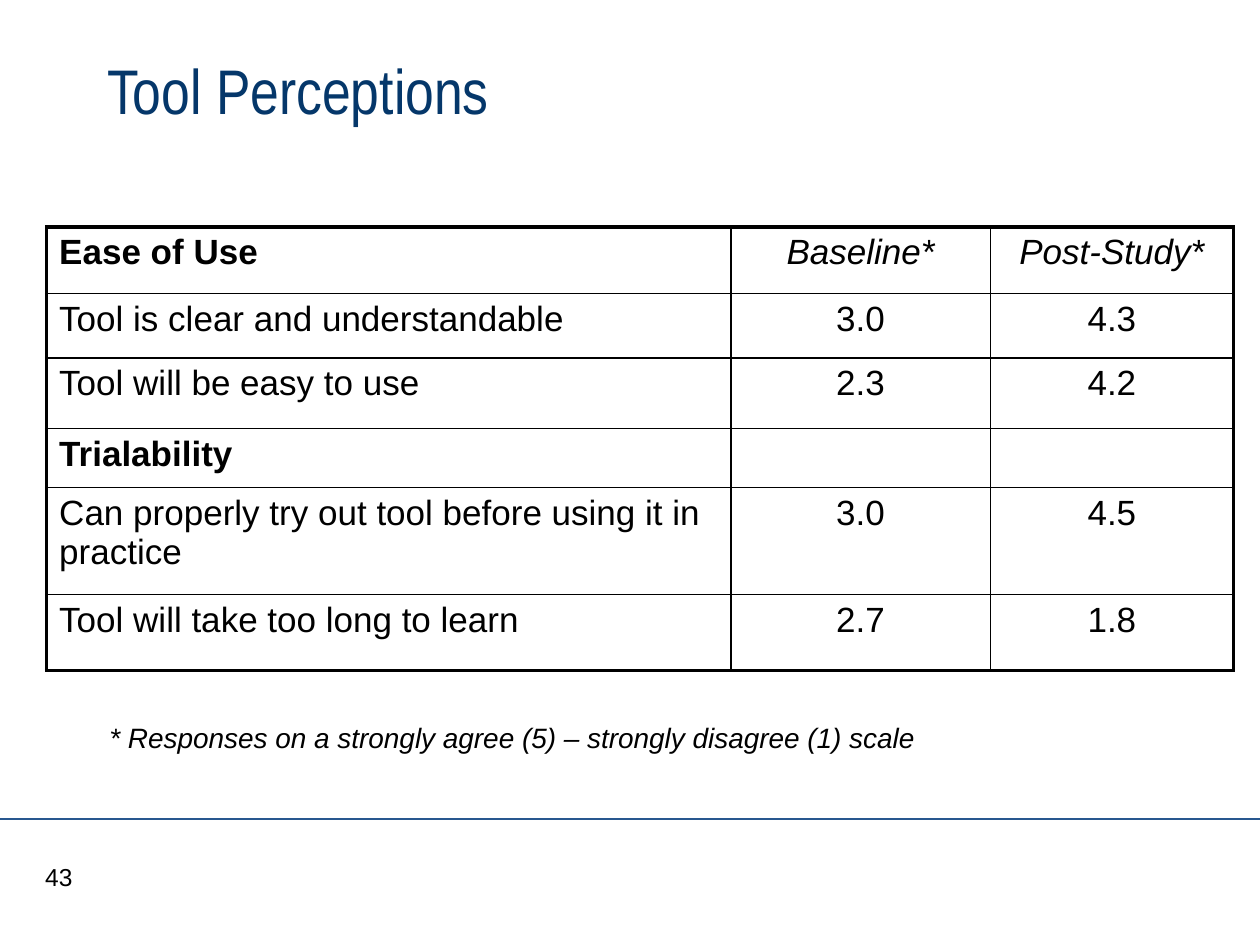
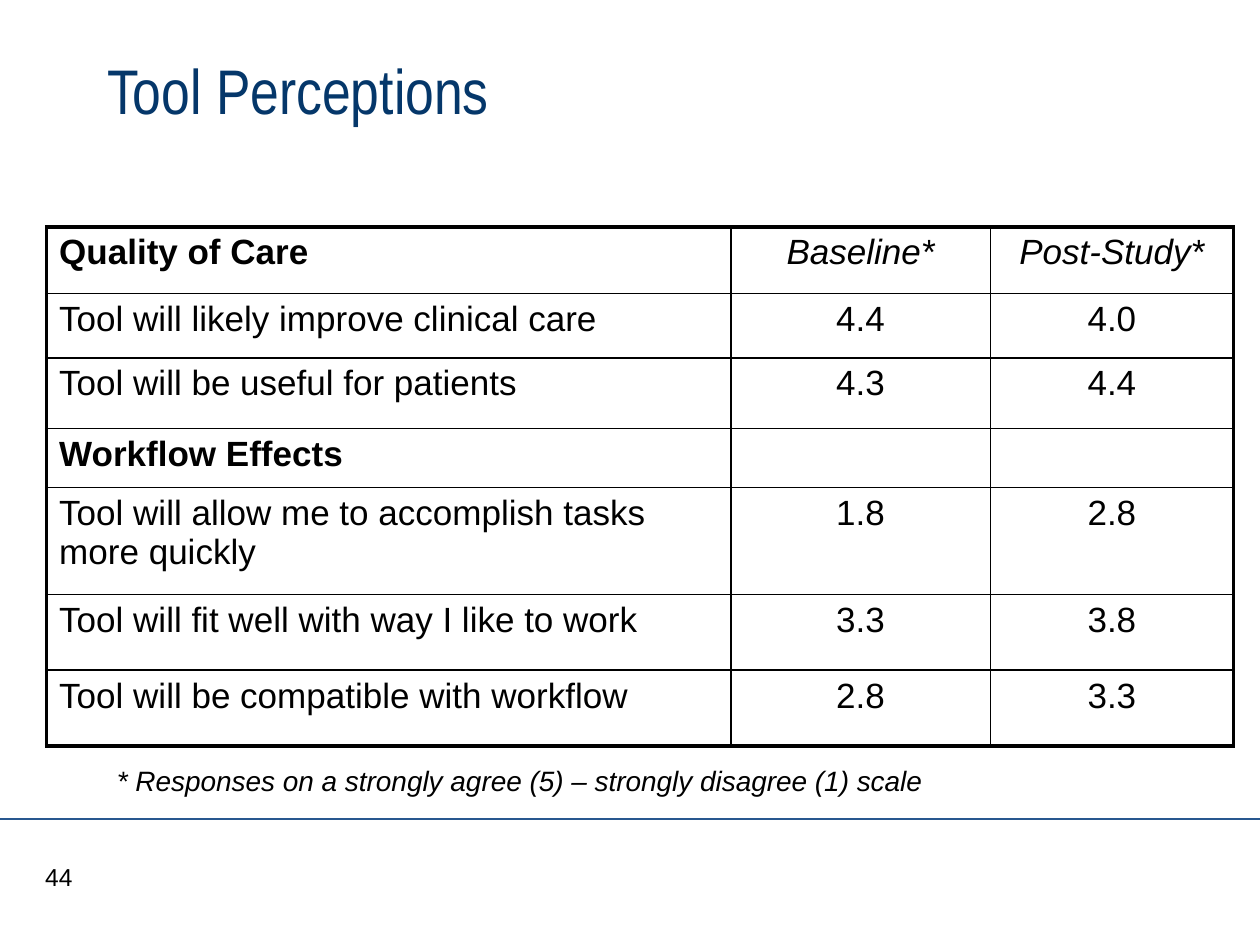
from dataclasses import dataclass

from lxml import etree
from pptx import Presentation
from pptx.dml.color import RGBColor
from pptx.enum.shapes import MSO_CONNECTOR
from pptx.enum.text import MSO_ANCHOR, MSO_AUTO_SIZE, PP_ALIGN
from pptx.oxml.ns import qn
from pptx.util import Inches, Pt

LEFT, CENTER = PP_ALIGN.LEFT, PP_ALIGN.CENTER
MIDDLE, TOP = MSO_ANCHOR.MIDDLE, MSO_ANCHOR.TOP
NO_AUTOFIT = MSO_AUTO_SIZE.NONE
STRAIGHT = MSO_CONNECTOR.STRAIGHT


@dataclass(frozen=True)
class Theme:
    title_color: RGBColor = RGBColor.from_string("05376A")
    rule_color: RGBColor = RGBColor.from_string("28578F")
    ink: RGBColor = RGBColor.from_string("000000")
    title_font: str = "Arial Narrow"
    body_font: str = "Arial"
    title_size: int = 36
    table_size: int = 20
    note_size: int = 16
    number_size: int = 14
    rule_width: float = 1.5
    outer_border: float = 2.25
    inner_border: float = 1


THEME = Theme()
SLIDE_WIDTH, SLIDE_HEIGHT = Inches(10), Inches(7.5)
RULE_TOP = Inches(6.5)
TABLE_LEFT, TABLE_TOP = Inches(0.37), Inches(1.8)
COLUMN_WIDTHS = [5.43, 2.06, 1.93]
ROW_HEIGHTS = [0.53, 0.51, 0.56, 0.47, 0.85, 0.6, 0.6]
TITLE = "Tool Perceptions"
NOTE = "* Responses on a strongly agree (5) – strongly disagree (1) scale"
FIRST_NUMBER = 43

# Each slide: place of the note (left, top) and the table rows
SLIDES = [
    ((0.77, 5.67), [
        ("Ease of Use", "Baseline*", "Post-Study*"),
        ("Tool is clear and understandable", "3.0", "4.3"),
        ("Tool will be easy to use", "2.3", "4.2"),
        ("Trialability", "", ""),
        ("Can properly try out tool before using it in practice", "3.0", "4.5"),
        ("Tool will take too long to learn", "2.7", "1.8"),
    ]),
    ((0.83, 6.01), [
        ("Quality of Care", "Baseline*", "Post-Study*"),
        ("Tool will likely improve clinical care", "4.4", "4.0"),
        ("Tool will be useful for patients", "4.3", "4.4"),
        ("Workflow Effects", "", ""),
        ("Tool will allow me to accomplish tasks more quickly", "1.8", "2.8"),
        ("Tool will fit well with way I like to work", "3.3", "3.8"),
        ("Tool will be compatible with workflow", "2.8", "3.3"),
    ]),
]
SECTION_ROWS = (0, 3)


def write(frame, text, size, font=THEME.body_font, color=THEME.ink,
          align=LEFT, bold=False, italic=False):
    """Put one styled run into the first paragraph and return the paragraph."""
    frame.word_wrap = True
    paragraph = frame.paragraphs[0]
    paragraph.alignment = align
    run = paragraph.add_run()
    run.text = text
    run.font.name, run.font.size = font, Pt(size)
    run.font.color.rgb = color
    run.font.bold, run.font.italic = bold, italic
    return paragraph


def set_borders(cell, widths):
    """Draw the cell's borders; widths maps L, R, T, B (in that order) to points."""
    properties = cell._tc.get_or_add_tcPr()
    for side, width in widths.items():
        line = etree.SubElement(properties, qn(f"a:ln{side}"), w=str(Pt(width)))
        fill = etree.SubElement(line, qn("a:solidFill"))
        etree.SubElement(fill, qn("a:srgbClr"), val=str(THEME.ink))


presentation = Presentation()
presentation.slide_width, presentation.slide_height = SLIDE_WIDTH, SLIDE_HEIGHT
title_only = presentation.slide_layouts[5]

for number, (note_place, rows) in enumerate(SLIDES, FIRST_NUMBER):
    slide = presentation.slides.add_slide(title_only)

    title = slide.shapes.title
    title.left, title.top = Inches(0.75), Inches(0.25)
    title.width, title.height = Inches(8.5), Inches(0.92)
    title.text_frame.auto_size = NO_AUTOFIT
    title.text_frame.vertical_anchor = MIDDLE
    write(title.text_frame, TITLE, THEME.title_size, THEME.title_font, THEME.title_color)

    rule = slide.shapes.add_connector(STRAIGHT, 0, RULE_TOP, SLIDE_WIDTH, RULE_TOP)
    rule.line.color.rgb = THEME.rule_color
    rule.line.width = Pt(THEME.rule_width)
    etree.SubElement(rule._element.spPr, qn("a:effectLst"))

    number_box = slide.shapes.add_textbox(
        Inches(0.26), Inches(6.79), Inches(0.45), Inches(0.33))
    write(number_box.text_frame, str(number), THEME.number_size)

    heights = ROW_HEIGHTS[:len(rows)]
    table = slide.shapes.add_table(
        len(rows), len(COLUMN_WIDTHS), TABLE_LEFT, TABLE_TOP,
        Inches(sum(COLUMN_WIDTHS)), Inches(sum(heights))).table
    table.first_row = table.horz_banding = False
    for column, width in zip(table.columns, COLUMN_WIDTHS):
        column.width = Inches(width)

    last_row, last_column = len(rows) - 1, len(COLUMN_WIDTHS) - 1
    for r, (values, height) in enumerate(zip(rows, heights)):
        table.rows[r].height = Inches(height)
        for c, value in enumerate(values):
            cell = table.cell(r, c)
            on_edge = {"L": c == 0, "R": c == last_column,
                       "T": r == 0, "B": r == last_row}
            set_borders(cell, {
                side: THEME.outer_border if edge else THEME.inner_border
                for side, edge in on_edge.items()})
            cell.fill.background()
            cell.vertical_anchor = TOP
            if value:
                write(cell.text_frame, value, THEME.table_size,
                      align=CENTER if c else LEFT,
                      bold=c == 0 and r in SECTION_ROWS,
                      italic=c > 0 and r == 0)

    note_left, note_top = note_place
    note_box = slide.shapes.add_textbox(
        Inches(note_left), Inches(note_top), Inches(8.5), Inches(0.55))
    note = write(note_box.text_frame, NOTE, THEME.note_size, italic=True)
    indent = Inches(0.38)
    note_properties = note._p.get_or_add_pPr()
    note_properties.set("marL", str(indent))
    note_properties.set("indent", str(-indent))

presentation.save("out.pptx")
